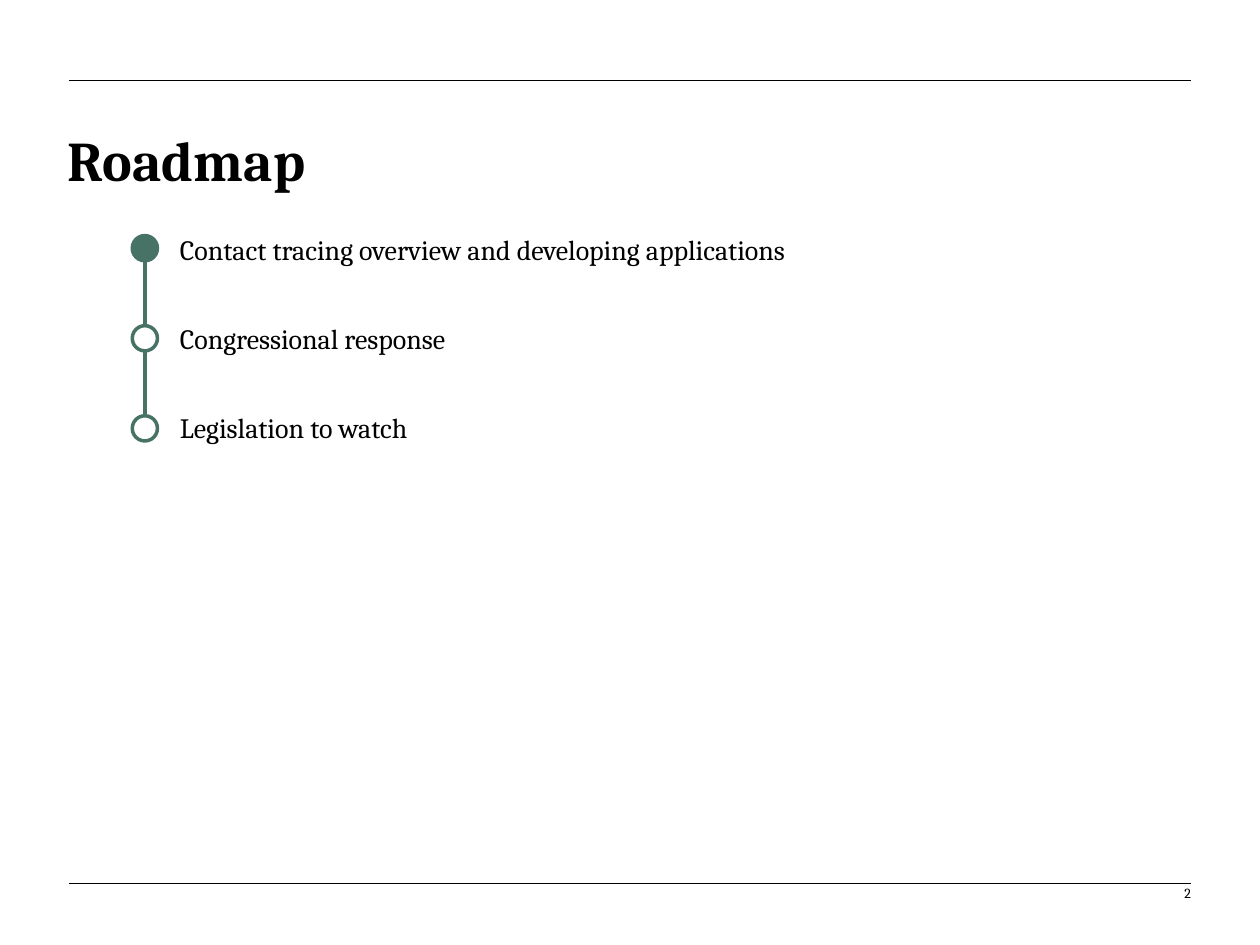
from lxml import etree
from pptx import Presentation
from pptx.dml.color import RGBColor
from pptx.enum import shapes, text
from pptx.oxml.ns import qn
from pptx.util import Inches, Pt

TITLE = "Roadmap"
PAGE_NUMBER = "2"
STEPS = [
    "Contact tracing overview and developing applications",
    "Congressional response",
    "Legislation to watch",
]
CURRENT_STEP = 0

FONT = "Cambria"
BLACK, WHITE, GREEN = "000000", "FFFFFF", "477367"
RULE_LEFT, RULE_RIGHT = 0.55, 9.45
RULE_TOPS = [7.01, 0.64]
DOT_LEFT, DOT_TOP, DOT_SIZE = 1.05, 1.87, 0.2
DOT_PITCH = 0.715


def color(value):
    return RGBColor.from_string(value)


def add_line(slide, start, end, line_color, width):
    points = [Inches(value) for value in (*start, *end)]
    line = slide.shapes.add_connector(shapes.MSO_CONNECTOR.STRAIGHT, *points)
    line.line.color.rgb = color(line_color)
    line.line.width = Pt(width)
    etree.SubElement(line._element.spPr, qn("a:effectLst"))


def add_shape(slide, kind, box, fill):
    shape = slide.shapes.add_shape(kind, *[Inches(value) for value in box])
    shape.shadow.inherit = False
    shape.fill.solid()
    shape.fill.fore_color.rgb = color(fill)
    return shape


def write(frame, lines, size, bold=False, align=text.PP_ALIGN.LEFT,
          anchor=text.MSO_ANCHOR.TOP, space_after=0):
    """Fill a text frame with one paragraph per line."""
    frame.word_wrap = True
    frame.vertical_anchor = anchor
    for index, line in enumerate(lines):
        paragraph = frame.add_paragraph() if index else frame.paragraphs[0]
        paragraph.alignment = align
        paragraph.space_after = Pt(space_after)
        run = paragraph.add_run()
        run.text = line
        run.font.name = FONT
        run.font.size = Pt(size)
        run.font.bold = bold
        run.font.color.rgb = color(BLACK)


def add_text(slide, box, line, size, **options):
    textbox = slide.shapes.add_textbox(*[Inches(value) for value in box])
    write(textbox.text_frame, [line], size, **options)


def add_roadmap(slide):
    center = DOT_LEFT + DOT_SIZE / 2
    last_top = DOT_TOP + DOT_PITCH * (len(STEPS) - 1)
    add_line(slide, (center, last_top + DOT_SIZE), (center, DOT_TOP + DOT_SIZE),
             GREEN, 2.25)

    panel = add_shape(slide, shapes.MSO_SHAPE.RECTANGLE, (1.33, 1.8, 6.89, 1.78), WHITE)
    panel.line.fill.background()
    write(panel.text_frame, STEPS, 16, space_after=31.5)

    for index in range(len(STEPS)):
        box = (DOT_LEFT, DOT_TOP + DOT_PITCH * index, DOT_SIZE, DOT_SIZE)
        fill = GREEN if index == CURRENT_STEP else WHITE
        dot = add_shape(slide, shapes.MSO_SHAPE.OVAL, box, fill)
        dot.line.color.rgb = color(GREEN)
        dot.line.width = Pt(2)


def main():
    presentation = Presentation()
    presentation.slide_width, presentation.slide_height = Inches(10), Inches(7.5)
    slide = presentation.slides.add_slide(presentation.slide_layouts[6])

    for top in RULE_TOPS:
        add_line(slide, (RULE_LEFT, top), (RULE_RIGHT, top), BLACK, 0.5)
    add_text(slide, (7.06, 6.89, 2.49, 0.4), PAGE_NUMBER, 8,
             align=text.PP_ALIGN.RIGHT, anchor=text.MSO_ANCHOR.MIDDLE)
    add_roadmap(slide)
    add_text(slide, (0.44, 0.95, 8.93, 0.72), TITLE, 32, bold=True)

    presentation.save("out.pptx")


if __name__ == "__main__":
    main()
